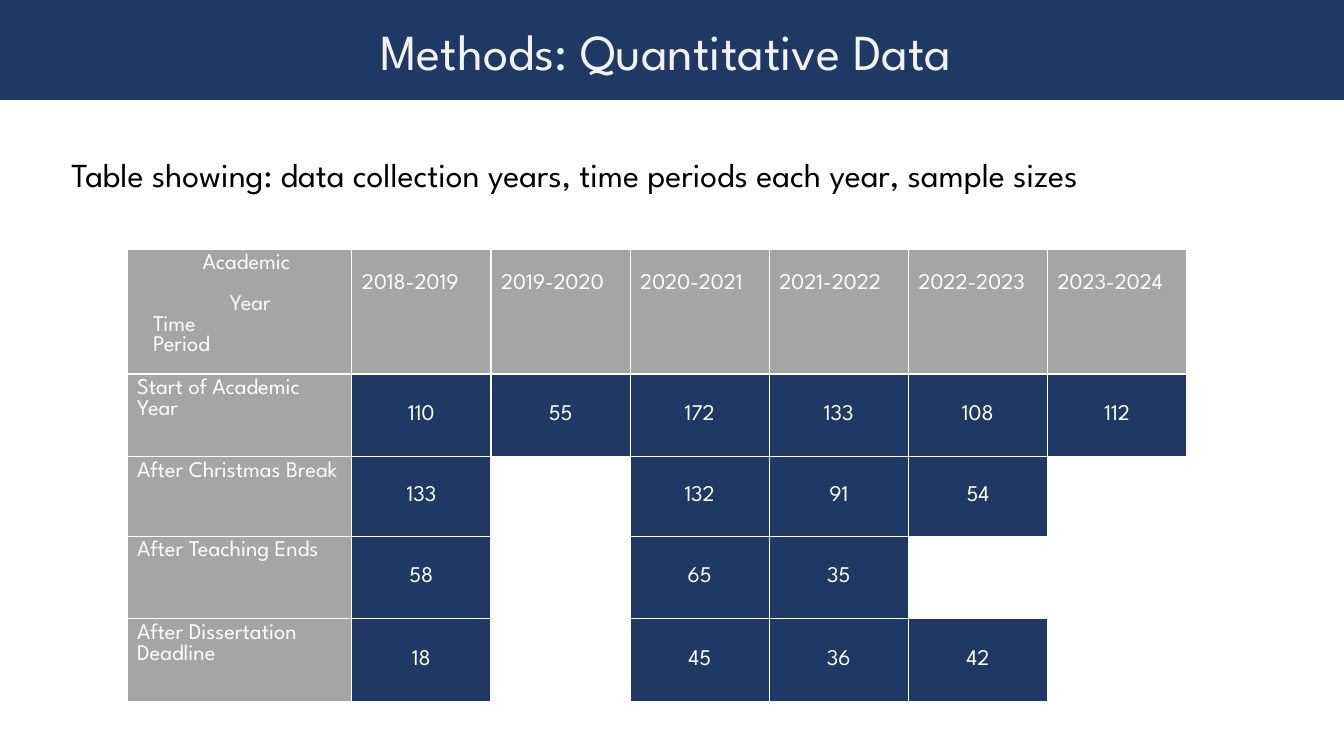
import pptx
import pptx.dml.color
import pptx.enum.shapes
import pptx.enum.text
import pptx.oxml
import pptx.oxml.ns
import pptx.util

Inches, Pt = pptx.util.Inches, pptx.util.Pt
RGBColor = pptx.dml.color.RGBColor
Align, Anchor = pptx.enum.text.PP_ALIGN, pptx.enum.text.MSO_ANCHOR

TITLE = "Methods: Quantitative Data"
CAPTION = "Table showing: data collection years, time periods each year, sample sizes"
# Corner heading lines: text, indent in inches, space before in points
CORNER = [("Academic", 0.65, 0), ("Year", 0.92, 14.6), ("Time", 0.16, 0), ("Period", 0.16, 0)]
YEARS = ["2018-2019", "2019-2020", "2020-2021", "2021-2022", "2022-2023", "2023-2024"]
SAMPLES = [
    ("Start of Academic Year", [110, 55, 172, 133, 108, 112]),
    ("After Christmas Break", [133, None, 132, 91, 54, None]),
    ("After Teaching Ends", [58, None, 65, 35, None, None]),
    ("After Dissertation Deadline", [18, None, 45, 36, 42, None]),
]

FONT = "League Spartan"
NAVY = RGBColor(0x20, 0x38, 0x64)
GREY = RGBColor(0xA5, 0xA5, 0xA5)
PALE = RGBColor(0xF2, 0xF2, 0xF2)
WHITE = RGBColor(0xFF, 0xFF, 0xFF)
BLACK = RGBColor(0x00, 0x00, 0x00)

WIDTH, HEIGHT = 13.33, 7.5
BAND_HEIGHT = 0.99
TABLE_LEFT, TABLE_TOP = 1.26, 2.47
COLUMNS = [2.23] + [1.38] * len(YEARS)
ROWS = [1.24, 0.82, 0.79, 0.82, 0.82]


def write(para, text, size=16, color=WHITE, align=Align.LEFT):
    para.alignment = align
    span = para.add_run()
    span.text = text
    span.font.name, span.font.size, span.font.bold = FONT, Pt(size), False
    span.font.color.rgb = color


def place(box, left, top, width, height):
    box.left, box.top = Inches(left), Inches(top)
    box.width, box.height = Inches(width), Inches(height)


def paint_cell(cell, fill):
    """Fill a cell and rule its four sides in white."""
    cell.fill.solid()
    cell.fill.fore_color.rgb = fill
    properties = cell._tc.get_or_add_tcPr()
    for index, side in enumerate("LRTB"):
        properties.insert(index, pptx.oxml.parse_xml(
            f'<a:ln{side} {pptx.oxml.ns.nsdecls("a")} w="12700"><a:solidFill>'
            f'<a:srgbClr val="{WHITE}"/></a:solidFill></a:ln{side}>'))


def add_heading(page):
    band = page.shapes.add_shape(
        pptx.enum.shapes.MSO_SHAPE.RECTANGLE, 0, 0, Inches(WIDTH), Inches(BAND_HEIGHT))
    band.shadow.inherit = False
    band.fill.solid()
    band.fill.fore_color.rgb = NAVY
    band.line.fill.background()
    title = page.shapes.title
    title.element.addprevious(band.element)
    place(title, 0.85, 0.12, 11.51, 0.75)
    title.text_frame.vertical_anchor = Anchor.MIDDLE
    write(title.text_frame.paragraphs[0], TITLE, size=36, color=PALE, align=Align.CENTER)


def add_samples(page):
    frame = page.shapes.add_table(
        len(ROWS), len(COLUMNS), Inches(TABLE_LEFT), Inches(TABLE_TOP),
        Inches(sum(COLUMNS)), Inches(sum(ROWS)))
    table = frame.table
    table.first_row = table.horz_banding = False
    for column, width in zip(table.columns, COLUMNS):
        column.width = Inches(width)
    for row, height in zip(table.rows, ROWS):
        row.height = Inches(height)

    corner = table.cell(0, 0)
    paint_cell(corner, GREY)
    for index, (text, indent, gap) in enumerate(CORNER):
        frame_text = corner.text_frame
        para = frame_text.add_paragraph() if index else frame_text.paragraphs[0]
        para.space_before = Pt(gap)
        para._p.get_or_add_pPr().set("marL", str(Inches(indent)))
        write(para, text)

    for column, year in enumerate(YEARS, 1):
        cell = table.cell(0, column)
        paint_cell(cell, GREY)
        cell.margin_top = Inches(0.25)
        write(cell.text_frame.paragraphs[0], year)

    for row, (period, counts) in enumerate(SAMPLES, 1):
        label = table.cell(row, 0)
        paint_cell(label, GREY)
        write(label.text_frame.paragraphs[0], period)
        for column, count in enumerate(counts, 1):
            cell = table.cell(row, column)
            paint_cell(cell, WHITE if count is None else NAVY)
            if count is not None:
                cell.vertical_anchor = Anchor.MIDDLE
                write(cell.text_frame.paragraphs[0], str(count), align=Align.CENTER)


def add_caption(page):
    box = page.shapes.add_textbox(0, 0, 0, 0)
    place(box, 0.61, 1.48, 12.25, 0.5)
    box.text_frame.word_wrap = True
    write(box.text_frame.paragraphs[0], CAPTION, size=24, color=BLACK)


def main():
    deck = pptx.Presentation()
    deck.slide_width, deck.slide_height = Inches(WIDTH), Inches(HEIGHT)
    page = deck.slides.add_slide(deck.slide_layouts.get_by_name("Title Only"))
    add_heading(page)
    add_samples(page)
    add_caption(page)
    deck.save("out.pptx")


if __name__ == "__main__":
    main()
